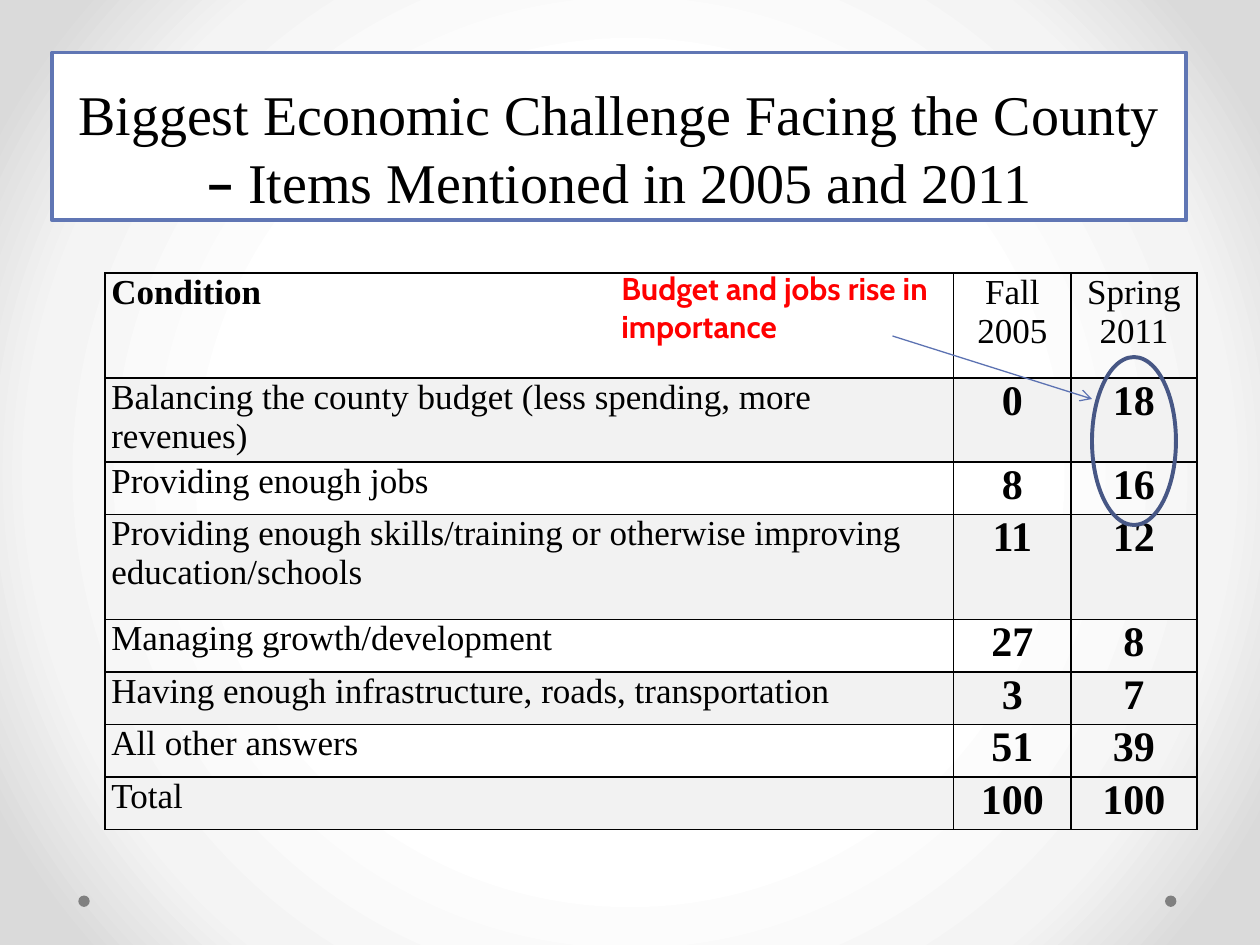
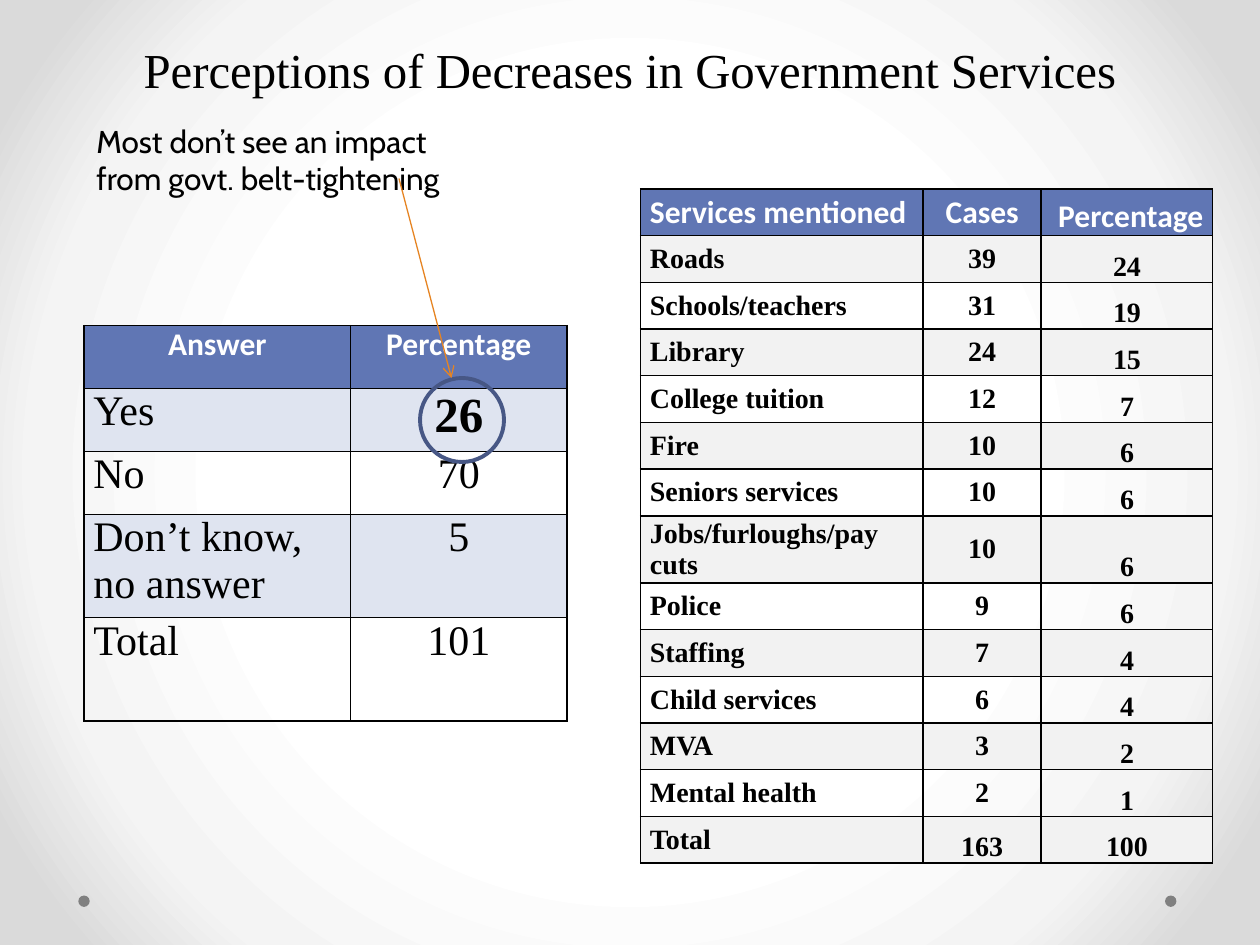
from pptx import Presentation
from pptx.dml.color import RGBColor
from pptx.enum import shapes, text
from pptx.oxml import parse_xml
from pptx.oxml.ns import nsdecls
from pptx.util import Pt

SERIF, SANS, HEADER_FONT = "Times New Roman", "Cabin", "Calibri"
BLACK, WHITE, RED = "000000", "FFFFFF", "FF0000"
BLUE, DARK_BLUE, ARROW_BLUE, ORANGE = "6076B4", "475785", "5C72B2", "E68422"
GRAY_BAND, BLUE_BAND, DOT_GRAY = "F2F2F2", "DFE4F0", "808080"
BACKDROP_STOPS = [(50, "FFFFFF"), (76, "F4F4F4"), (92, "DADADA")]
DOT_CENTERS, DOT_SIZE = [(48, 515), (669, 515)], 6.5

LEFT, CENTER, RIGHT = text.PP_ALIGN.LEFT, text.PP_ALIGN.CENTER, text.PP_ALIGN.RIGHT
TOP, MIDDLE, BOTTOM = (text.MSO_ANCHOR.TOP, text.MSO_ANCHOR.MIDDLE,
                       text.MSO_ANCHOR.BOTTOM)

CHALLENGE_TITLE = [
    ("Biggest Economic Challenge Facing the County ", SERIF),
    ("–", SANS),
    (" Items Mentioned in 2005 and 2011", SERIF),
]
CHALLENGES = [
    ("Condition", "Fall\n2005", "Spring\n2011"),
    ("Balancing the county budget (less spending, more revenues)", "0", "18"),
    ("Providing enough jobs", "8", "16"),
    ("Providing enough skills/training or otherwise improving education/schools",
     "11", "12"),
    ("Managing growth/development", "27", "8"),
    ("Having enough infrastructure, roads, transportation", "3", "7"),
    ("All other answers", "51", "39"),
    ("Total", "100", "100"),
]
CHALLENGE_NOTE = "Budget and jobs rise in importance"

SERVICES_TITLE = [("Perceptions of Decreases in Government Services", SERIF)]
ANSWERS = [
    ("Answer", "Percentage"),
    ("Yes", "26"),
    ("No", "70"),
    ("Don’t know, no answer", "5"),
    ("Total", "101"),
]
SERVICES = [
    ("Services mentioned", "Cases", "Percentage"),
    ("Roads", "39", "24"),
    ("Schools/teachers", "31", "19"),
    ("Library", "24", "15"),
    ("College tuition", "12", "7"),
    ("Fire", "10", "6"),
    ("Seniors services", "10", "6"),
    ("Jobs/furloughs/pay cuts", "10", "6"),
    ("Police", "9", "6"),
    ("Staffing", "7", "4"),
    ("Child services", "6", "4"),
    ("MVA", "3", "2"),
    ("Mental health", "2", "1"),
    ("Total", "163", "100"),
]
SERVICES_NOTE = "Most don’t see an impact from govt. belt-tightening"


def rgb(color):
    return RGBColor.from_string(color)


def points(*lengths):
    return [Pt(length) for length in lengths]


def style_font(font, size, name, color=BLACK, bold=False):
    font.size, font.name, font.bold = Pt(size), name, bold
    font.color.rgb = rgb(color)


def add_base_slide(presentation):
    """Blank slide with the radial backdrop and the two footer dots."""
    slide = presentation.slides.add_slide(presentation.slide_layouts[6])
    stops = "".join(f'<a:gs pos="{position * 1000}"><a:srgbClr val="{color}"/></a:gs>'
                    for position, color in BACKDROP_STOPS)
    slide.element.cSld.insert(0, parse_xml(
        f'<p:bg {nsdecls("p", "a")}><p:bgPr><a:gradFill rotWithShape="1">'
        f'<a:gsLst>{stops}</a:gsLst><a:path path="circle">'
        '<a:fillToRect l="50000" t="50000" r="50000" b="50000"/></a:path>'
        '</a:gradFill><a:effectLst/></p:bgPr></p:bg>'))
    for x, y in DOT_CENTERS:
        add_shape(slide, shapes.MSO_SHAPE.OVAL, fill=DOT_GRAY,
                  box=(x - DOT_SIZE / 2, y - DOT_SIZE / 2, DOT_SIZE, DOT_SIZE))
    return slide


def add_shape(slide, kind, box, fill=None, line=None):
    shape = slide.shapes.add_shape(kind, *points(*box))
    shape.shadow.inherit = False
    if fill:
        shape.fill.solid()
        shape.fill.fore_color.rgb = rgb(fill)
    else:
        shape.fill.background()
    if line:
        shape.line.color.rgb = rgb(line)
        shape.line.width = Pt(2.25)
    else:
        shape.line.fill.background()
    return shape


def add_highlight(slide, box):
    add_shape(slide, shapes.MSO_SHAPE.OVAL, box, line=DARK_BLUE)


def write_title(shape, runs, size):
    frame = shape.text_frame
    frame.word_wrap, frame.vertical_anchor = True, BOTTOM
    paragraph = frame.paragraphs[0]
    paragraph.alignment = CENTER
    for words, font_name in runs:
        run = paragraph.add_run()
        run.text = words
        style_font(run.font, size, font_name)


def add_note(slide, box, words, color=BLACK, bold=False):
    frame = slide.shapes.add_textbox(*points(*box)).text_frame
    frame.word_wrap = True
    frame.text = words
    style_font(frame.paragraphs[0].font, 18, SANS, color, bold)


def add_arrow(slide, start, end, color):
    arrow = slide.shapes.add_connector(shapes.MSO_CONNECTOR.STRAIGHT,
                                       *points(*start, *end))
    arrow.line.color.rgb = rgb(color)
    arrow.line.width = Pt(0.75)
    arrow.line._get_or_add_ln().append(
        parse_xml(f'<a:tailEnd {nsdecls("a")} type="arrow"/>'))
    arrow._element.spPr.append(parse_xml(f'<a:effectLst {nsdecls("a")}/>'))


def add_borders(cell):
    properties = cell._tc.get_or_add_tcPr()
    for index, side in enumerate("LRTB"):
        properties.insert(index, parse_xml(
            f'<a:ln{side} {nsdecls("a")} w="12700"><a:solidFill>'
            f'<a:srgbClr val="{BLACK}"/></a:solidFill></a:ln{side}>'))


def add_grid(slide, corner, widths, heights, rows, inset, cell_format):
    """Table whose cell_format(row, column) gives font, alignment, anchor and fill."""
    table = slide.shapes.add_table(
        len(rows), len(widths), *points(*corner, sum(widths), sum(heights))).table
    table.first_row = table.horz_banding = False
    for column, width in zip(table.columns, widths):
        column.width = Pt(width)
    for row_index, (row, height) in enumerate(zip(rows, heights)):
        table.rows[row_index].height = Pt(height)
        for column_index, words in enumerate(row):
            cell = table.cell(row_index, column_index)
            font, alignment, anchor, fill = cell_format(row_index, column_index)
            cell.text = words
            cell.vertical_anchor = anchor
            cell.margin_left = cell.margin_right = Pt(inset)
            cell.margin_top = cell.margin_bottom = 0
            for paragraph in cell.text_frame.paragraphs:
                paragraph.alignment = alignment
                style_font(paragraph.font, **font)
            if fill:
                cell.fill.solid()
                cell.fill.fore_color.rgb = rgb(fill)
            else:
                cell.fill.background()
            add_borders(cell)


def band(row, color):
    return color if row % 2 else None


def column_alignment(column):
    return CENTER if column else LEFT


HEADER = dict(size=18, name=HEADER_FONT, color=WHITE, bold=True)


def challenge_format(row, column):
    is_value = row > 0 and column > 0
    font = dict(size=24 if is_value else 20, name=SERIF,
                bold=is_value or row == column == 0)
    return font, column_alignment(column), TOP, band(row, GRAY_BAND)


def answer_format(row, column):
    if row == 0:
        return HEADER, CENTER, TOP, BLUE
    is_key = (row, column) == (1, 1)
    font = dict(size=28 if is_key else 24, name=SERIF, bold=is_key)
    return font, column_alignment(column), TOP, band(row, BLUE_BAND)


def service_format(row, column):
    is_total = row == len(SERVICES) - 1
    anchor = BOTTOM if column == 2 or (is_total and column == 1) else MIDDLE
    if row == 0:
        return HEADER, (LEFT, CENTER, RIGHT)[column], anchor, BLUE
    font = dict(size=16, name=SERIF, bold=True)
    return font, column_alignment(column), anchor, band(row, GRAY_BAND)


def build_challenge_slide(presentation):
    slide = add_base_slide(presentation)
    add_grid(slide, (60, 156), (485, 67, 72), (60, 48, 30, 60, 30, 30, 30, 30),
             CHALLENGES, 3.6, challenge_format)
    title = add_shape(slide, shapes.MSO_SHAPE.RECTANGLE, (30, 30, 648, 96),
                      WHITE, BLUE)
    write_title(title, CHALLENGE_TITLE, 32)
    add_highlight(slide, (624, 204, 48, 96))
    add_note(slide, (348, 150, 204, 51), CHALLENGE_NOTE, RED, bold=True)
    add_arrow(slide, (510, 192), (624, 228), ARROW_BLUE)


def build_services_slide(presentation):
    slide = add_base_slide(presentation)
    title = slide.shapes.add_textbox(*points(36, 24, 648, 36))
    write_title(title, SERVICES_TITLE, 27.9)
    add_grid(slide, (48, 186), (152.4, 123.6), (36, 36, 36, 59, 59),
             ANSWERS, 5.4, answer_format)
    service_heights = [38 if row[0].startswith("Jobs") else 26.7 for row in SERVICES]
    add_grid(slide, (366, 108), (161.5, 67.5, 98), service_heights,
             SERVICES, 5.4, service_format)
    add_note(slide, (48, 66, 240, 51), SERVICES_NOTE)
    add_highlight(slide, (240, 216, 48, 48))
    add_arrow(slide, (228, 102), (258, 216), ORANGE)


def main():
    presentation = Presentation()
    presentation.slide_width, presentation.slide_height = points(720, 540)
    build_challenge_slide(presentation)
    build_services_slide(presentation)
    presentation.save("out.pptx")


if __name__ == "__main__":
    main()
